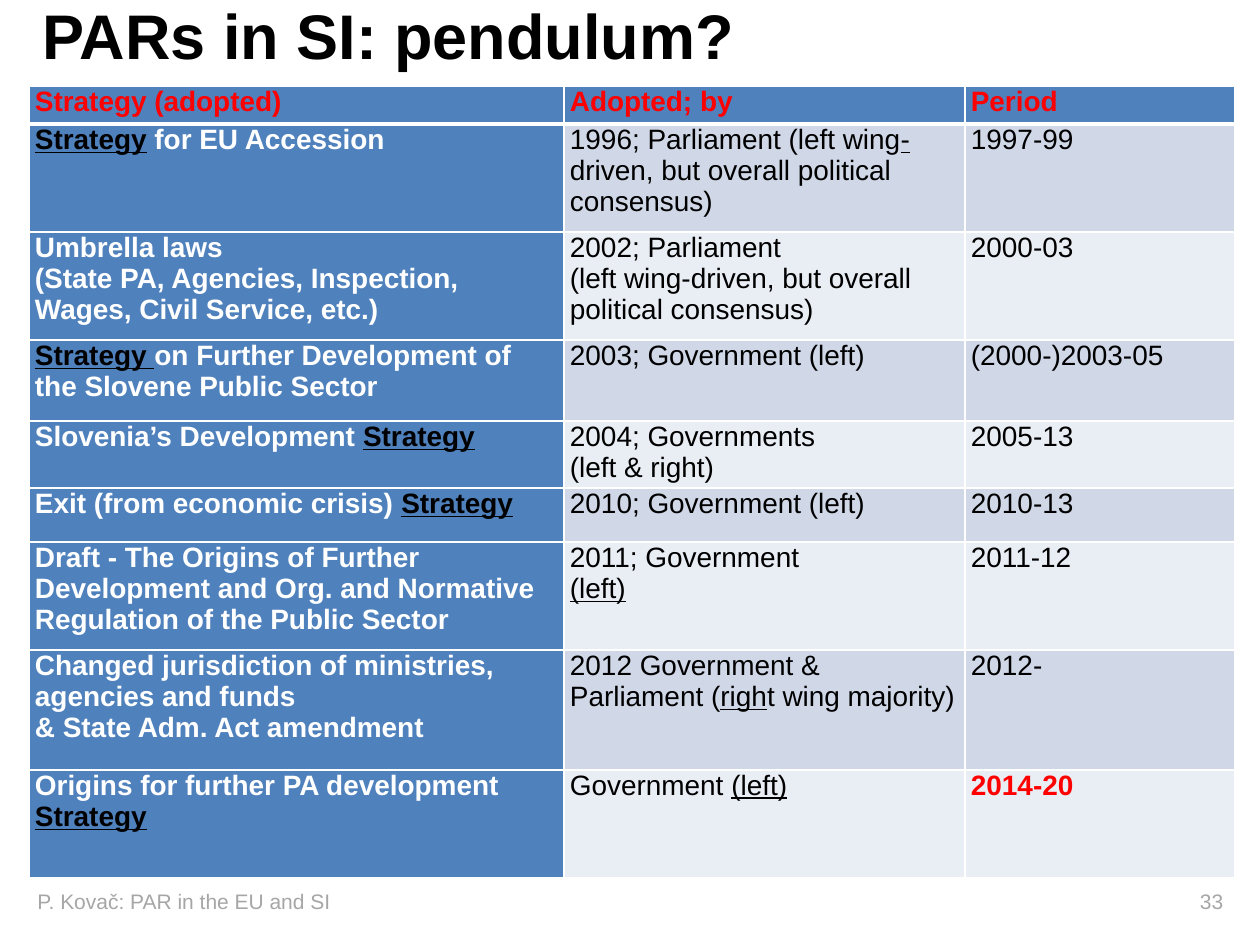
from lxml.etree import SubElement
from pptx import Presentation
from pptx.dml.color import RGBColor
from pptx.enum.text import MSO_ANCHOR, PP_ALIGN
from pptx.oxml.ns import qn
from pptx.util import Pt

EMU_PER_PX = 9144000 / 1260
COLORS = {
    "black": "000000", "white": "FFFFFF", "red": "FF0000", "blue": "4F81BD",
    "band_dark": "D0D8E8", "band_light": "E9EDF4", "grey": "A6A6A6",
}
TITLE_FORMAT = {"name": "Arial", "size": Pt(36), "bold": True}
BOLD_FORMAT = {"name": "Arial", "size": Pt(16), "bold": True}
PLAIN_FORMAT = {"name": "Arial", "size": Pt(16), "bold": False}
FOOTER_FORMAT = {"name": "Arial", "size": Pt(12), "bold": False}
COLUMN_WIDTHS = [535, 401, 270]
ROW_HEIGHTS = [38, 108, 108, 81, 67, 54, 108, 120, 108]
ROWS = [
    ("Strategy (adopted)", "Adopted; by", "Period"),
    ("_Strategy_ for EU Accession",
     "1996; Parliament (left wing_-_ driven, but overall political consensus)",
     "1997-99"),
    ("Umbrella laws\n(State PA, Agencies, Inspection, Wages, Civil Service, etc.)",
     "2002; Parliament\n(left wing-driven, but overall political consensus)",
     "2000-03"),
    ("_Strategy _on Further Development of the Slovene Public Sector",
     "2003; Government (left)", "(2000-)2003-05"),
    ("Slovenia’s Development _Strategy_",
     "2004; Governments\n(left & right)", "2005-13"),
    ("Exit (from economic crisis) _Strategy_",
     "2010; Government (left)", "2010-13"),
    ("Draft - The Origins of Further Development and Org. and Normative "
     "Regulation of the Public Sector",
     "2011; Government\n_(left)_", "2011-12"),
    ("Changed jurisdiction of ministries, agencies and funds\n"
     "& State Adm. Act amendment",
     "2012 Government & Parliament (_righ_t wing majority)", "2012-"),
    ("Origins for further PA development\n_Strategy_",
     "Government _(left)_", "2014-20"),
]


def px(length):
    """Turn pixels into EMU."""
    return round(length * EMU_PER_PX)


def set_format(target, values):
    """Set each named attribute of the target."""
    for name, value in values.items():
        setattr(target, name, value)


def write_text(frame, text, color, values, align=PP_ALIGN.LEFT):
    """Write one paragraph per line; underscores enclose underlined spans."""
    for number, line in enumerate(text.split("\n")):
        para = frame.add_paragraph() if number else frame.paragraphs[0]
        para.alignment = align
        for index, part in enumerate(line.split("_")):
            if not part:
                continue
            underlined = index % 2 == 1
            span = para.add_run()
            span.text = part
            set_format(span.font, {**values, "underline": underlined})
            span.font.color.rgb = RGBColor.from_string(
                COLORS["black" if underlined else color])


def add_title(page, left, top, width, height):
    """Place the slide title."""
    title = page.shapes.title
    set_format(title, {"left": px(left), "top": px(top),
                       "width": px(width), "height": px(height)})
    title.text_frame.vertical_anchor = MSO_ANCHOR.TOP
    write_text(title.text_frame, "PARs in SI: pendulum?", "black", TITLE_FORMAT)


def add_borders(cell, widths):
    """Draw white cell borders of the given point widths."""
    properties = cell._tc.get_or_add_tcPr()
    for side, width in widths.items():
        line = SubElement(properties, qn(f"a:ln{side}"), w=str(Pt(width)))
        fill = SubElement(line, qn("a:solidFill"))
        SubElement(fill, qn("a:srgbClr"), val=COLORS["white"])


def cell_style(row, column):
    """Return fill, text colour, text format and alignment for a cell."""
    if row == 0:
        return "blue", "red", BOLD_FORMAT, PP_ALIGN.LEFT
    if column == 0:
        return "blue", "white", BOLD_FORMAT, PP_ALIGN.LEFT
    band = "band_dark" if row % 2 else "band_light"
    if column == 1:
        return band, "black", PLAIN_FORMAT, PP_ALIGN.LEFT
    if row == len(ROWS) - 1:
        return band, "red", BOLD_FORMAT, PP_ALIGN.JUSTIFY
    return band, "black", PLAIN_FORMAT, PP_ALIGN.JUSTIFY


def add_strategy_table(page, left, top):
    """Place the table of strategies, adopters and periods."""
    table = page.shapes.add_table(
        len(ROWS), len(COLUMN_WIDTHS), px(left), px(top),
        px(sum(COLUMN_WIDTHS)), px(sum(ROW_HEIGHTS))).table
    for column, width in zip(table.columns, COLUMN_WIDTHS):
        column.width = px(width)
    for row, height in zip(table.rows, ROW_HEIGHTS):
        row.height = px(height)
    margins = {"margin_left": px(6), "margin_right": px(6),
               "margin_top": 0, "margin_bottom": 0}
    for r, texts in enumerate(ROWS):
        for c, text in enumerate(texts):
            cell = table.cell(r, c)
            fill, color, values, align = cell_style(r, c)
            set_format(cell, margins)
            add_borders(cell, {"L": 1, "R": 1, "T": 3 if r == 1 else 1,
                               "B": 3 if r == 0 else 1})
            cell.fill.solid()
            cell.fill.fore_color.rgb = RGBColor.from_string(COLORS[fill])
            write_text(cell.text_frame, text, color, values, align)


def add_footer(page, left, top, width, height):
    """Place the footer with the page number at a right tab stop."""
    box = page.shapes.add_textbox(px(left), px(top), px(width), px(height))
    frame = box.text_frame
    set_format(frame, {"word_wrap": True, "vertical_anchor": MSO_ANCHOR.MIDDLE})
    write_text(frame, "P. Kovač: PAR in the EU and SI\t33", "grey", FOOTER_FORMAT)
    tabs = SubElement(frame.paragraphs[0]._p.get_or_add_pPr(), qn("a:tabLst"))
    SubElement(tabs, qn("a:tab"), pos=str(px(width - 39)), algn="r")


def main():
    """Build and save the deck."""
    deck = Presentation()
    set_format(deck, {"slide_width": px(1260), "slide_height": px(945)})
    page = deck.slides.add_slide(deck.slide_layouts[5])
    add_title(page, 30, -10, 1230, 158)
    add_strategy_table(page, 29, 86)
    add_footer(page, 25, 876, 1225, 50)
    deck.save("out.pptx")


if __name__ == "__main__":
    main()
